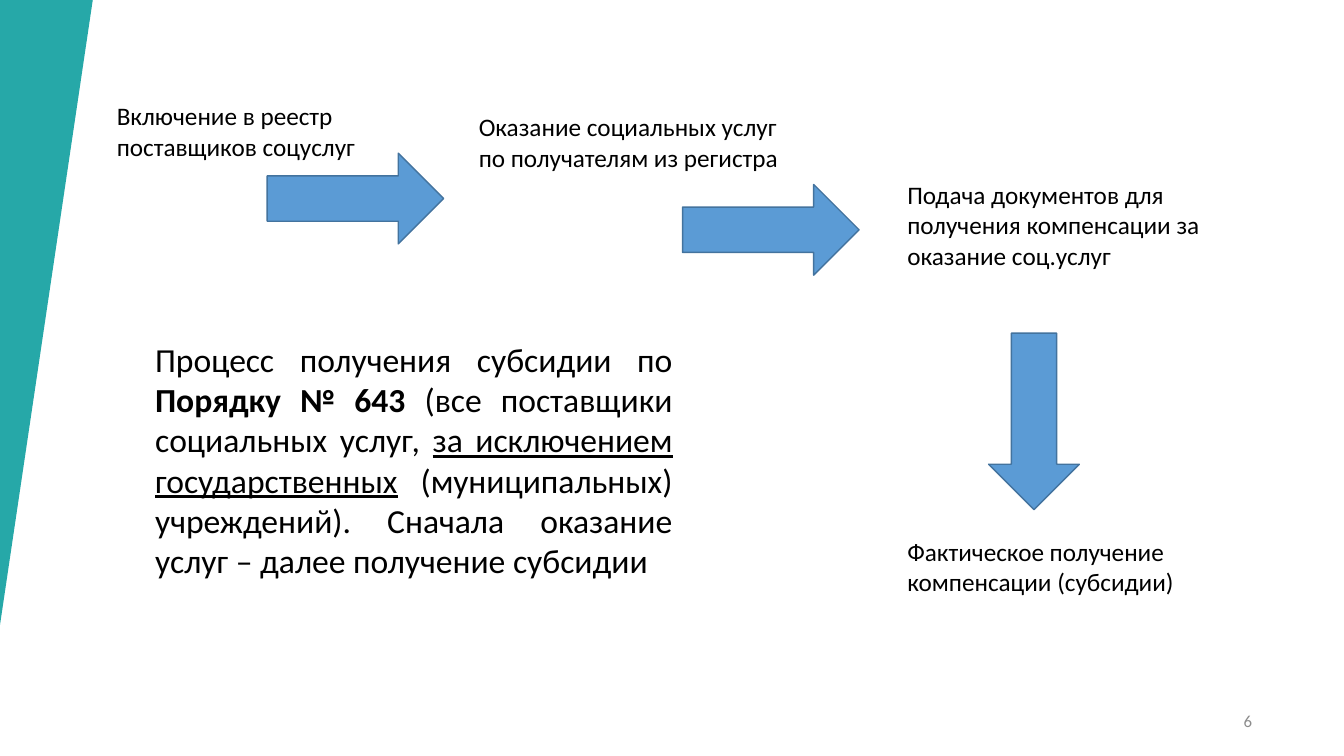
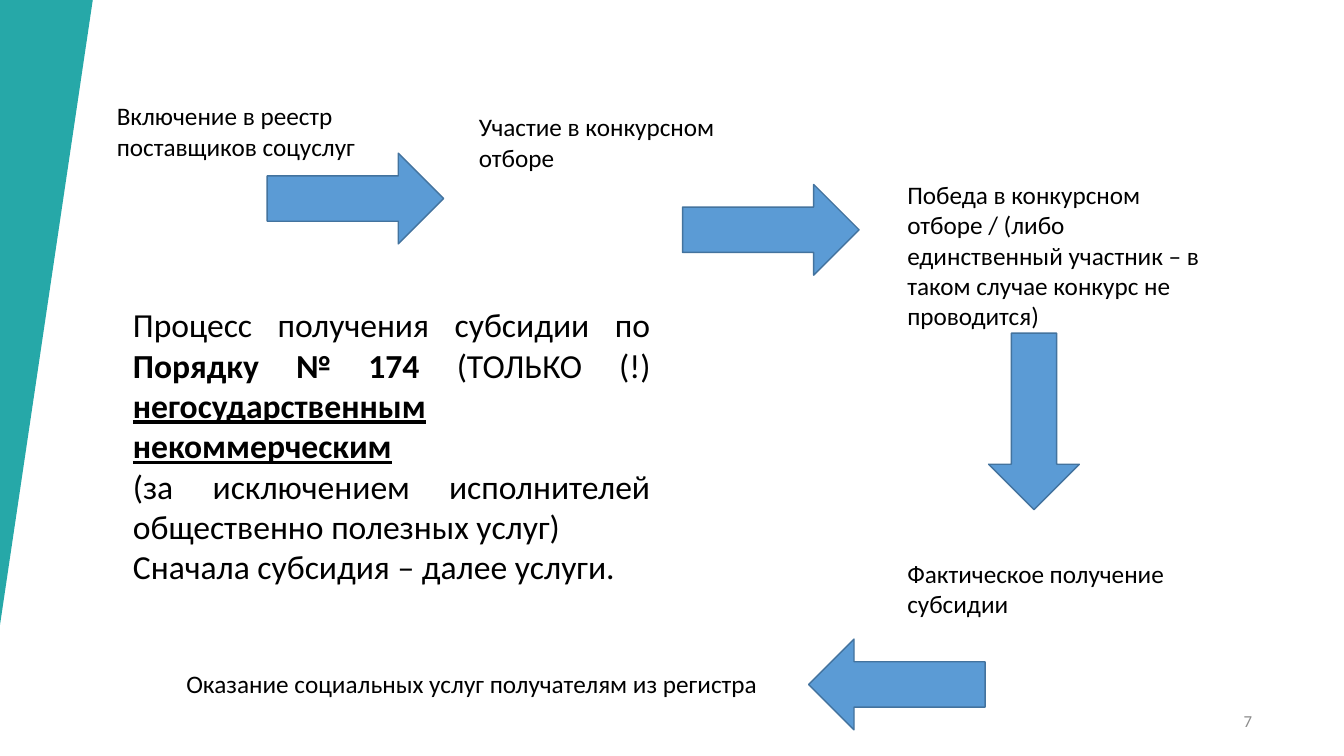
from lxml import etree
from pptx import Presentation
from pptx.dml.color import RGBColor
from pptx.enum import shapes, text
from pptx.oxml.ns import qn
from pptx.util import Inches, Pt

FONT = "Calibri"
TEAL, BLUE, DARK_BLUE = "009999", "5B9BD5", "43739E"
BLACK, GRAY = "000000", "8C8C8C"
ARROW_SIZE = (1.75, 0.9)
# Left, top and rotation of the arrows
STEP_ARROWS = [(2.65, 1.52, 0), (6.77, 1.83, 0), (9.38, 3.73, 90)]
LAST_ARROW = (8.02, 6.34, 180)


def color(value):
    return RGBColor.from_string(value)


def add_text(slide, box, paragraphs, size=18, font_color=BLACK,
             align=text.PP_ALIGN.LEFT):
    """Each paragraph is a list of (words, style); style holds "b" and/or "u"."""
    shape = slide.shapes.add_textbox(*map(Inches, box))
    frame = shape.text_frame
    frame.word_wrap = True
    frame.auto_size = text.MSO_AUTO_SIZE.SHAPE_TO_FIT_TEXT
    for index, runs in enumerate(paragraphs):
        paragraph = frame.add_paragraph() if index else frame.paragraphs[0]
        paragraph.alignment = align
        paragraph.font.name = FONT
        paragraph.font.size = Pt(size)
        paragraph.font.color.rgb = color(font_color)
        for words, style in runs:
            run = paragraph.add_run()
            run.text = words
            if "b" in style:
                run.font.bold = True
            if "u" in style:
                run.font.underline = True
    return frame


def add_band(slide, width=0.92, height=6.2):
    """Translucent wedge along the left edge."""
    builder = slide.shapes.build_freeform(Inches(width), 0)
    builder.add_line_segments([(0, 0), (0, Inches(height))], close=True)
    band = builder.convert_to_shape()
    band.shadow.inherit = False
    band.fill.solid()
    band.fill.fore_color.rgb = color(TEAL)
    band.line.fill.background()
    fill_color = band.fill._xPr.find(qn("a:solidFill")).find(qn("a:srgbClr"))
    etree.SubElement(fill_color, qn("a:alpha"), val="85000")


def add_slide_number(slide, number):
    frame = add_text(slide, (9.42, 6.95, 3, 0.4), [[(str(number), "")]],
                     12, GRAY, text.PP_ALIGN.RIGHT)
    frame.auto_size = text.MSO_AUTO_SIZE.NONE
    frame.vertical_anchor = text.MSO_ANCHOR.MIDDLE
    frame.margin_left = frame.margin_right = 0
    frame.margin_top = frame.margin_bottom = 0


def add_arrow(slide, left, top, rotation):
    arrow = slide.shapes.add_shape(
        shapes.MSO_SHAPE.RIGHT_ARROW, *map(Inches, (left, top, *ARROW_SIZE)))
    arrow.rotation = rotation
    arrow.shadow.inherit = False
    arrow.fill.solid()
    arrow.fill.fore_color.rgb = color(BLUE)
    arrow.line.color.rgb = color(DARK_BLUE)
    arrow.line.width = Pt(1)


def add_process_slide(presentation, number, arrows, steps, summary_box, summary):
    slide = presentation.slides.add_slide(presentation.slide_layouts[6])
    add_slide_number(slide, number)
    add_band(slide)
    for arrow in arrows:
        add_arrow(slide, *arrow)
    for box, words in steps:
        add_text(slide, box, [[(words, "")]])
    add_text(slide, summary_box, summary, 24, align=text.PP_ALIGN.JUSTIFY)


def main():
    presentation = Presentation()
    presentation.slide_width = Inches(13.33)
    presentation.slide_height = Inches(7.5)

    registry_step = ((1.06, 0.95, 2.58, 0.71),
                     "Включение в реестр поставщиков соцуслуг")
    second_box = (4.65, 1.06, 3.25, 0.71)

    # Services first, subsidy afterwards
    add_process_slide(
        presentation, 6, STEP_ARROWS,
        [registry_step,
         (second_box, "Оказание социальных услуг по получателям из регистра"),
         ((8.9, 1.73, 3.25, 1.01),
          "Подача документов для получения компенсации за оказание соц.услуг"),
         ((8.9, 5.27, 3.25, 0.71),
          "Фактическое получение компенсации (субсидии)")],
        (1.44, 3.31, 5.33, 2.52),
        [[("Процесс получения субсидии по ", ""),
          ("Порядку № 643 ", "b"),
          ("(все поставщики социальных услуг, ", ""),
          ("за исключением государственных", "u"),
          (" (муниципальных) учреждений). Сначала оказание услуг – "
           "далее получение субсидии", "")]])

    # Subsidy first, services afterwards
    add_process_slide(
        presentation, 7, STEP_ARROWS + [LAST_ARROW],
        [registry_step,
         (second_box, "Участие в конкурсном отборе"),
         ((8.9, 1.73, 3.25, 1.62),
          "Победа в конкурсном отборе / (либо единственный участник – "
          "в таком случае конкурс не проводится)"),
         ((8.9, 5.49, 3.25, 0.71), "Фактическое получение субсидии"),
         ((1.75, 6.58, 6.67, 0.4),
          "Оказание социальных услуг получателям из регистра")],
        (1.22, 2.97, 5.33, 2.95),
        [[("Процесс получения субсидии по ", ""),
          ("Порядку № 174 ", "b"),
          ("(ТОЛЬКО (!) ", ""),
          ("негосударственным", "bu"),
          (" ", ""),
          ("некоммерческим", "bu")],
         [("(за исключением исполнителей общественно полезных услуг)", "")],
         [("Сначала субсидия – далее услуги.", "")]])

    presentation.save("out.pptx")


if __name__ == "__main__":
    main()
